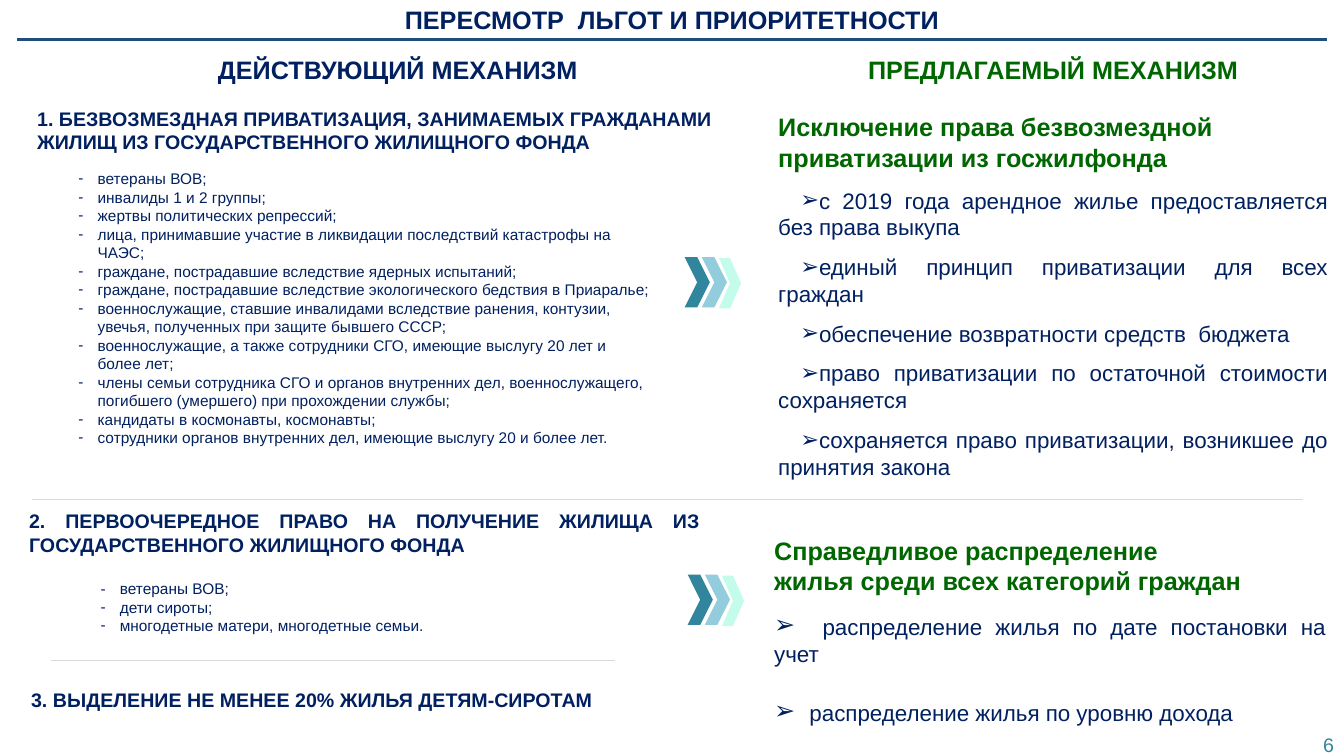
import pptx
import pptx.util
import lxml.etree
from pptx.dml.color import RGBColor
from pptx.enum.shapes import MSO_CONNECTOR, MSO_SHAPE
from pptx.enum.text import MSO_ANCHOR, PP_ALIGN
from pptx.oxml.ns import qn
from pptx.util import Inches

COLORS = {
    "navy": "002060", "green": "006600", "rule": "1E4E79", "divider": "D9D9D9",
    "teal": "31859C", "sky": "93CDDD", "mint": "C4FCEB",
}
LEFT, CENTER, RIGHT, JUSTIFY = PP_ALIGN.LEFT, PP_ALIGN.CENTER, PP_ALIGN.RIGHT, PP_ALIGN.JUSTIFY

# text, place, size, colour, bold, alignment, wrap, anchor, (side, top) inset
LABELS = [
    ("ПЕРЕСМОТР  ЛЬГОТ И ПРИОРИТЕТНОСТИ", (0, -0.05, 13.33, 0.48),
     18, "navy", True, CENTER, True, MSO_ANCHOR.MIDDLE, (0.07, 0.04)),
    ("ДЕЙСТВУЮЩИЙ МЕХАНИЗМ", (2.04, 0.49, 3.81, 0.4),
     18, "navy", True, CENTER, False, MSO_ANCHOR.TOP, (0.1, 0.05)),
    ("ПРЕДЛАГАЕМЫЙ МЕХАНИЗМ", (8.49, 0.49, 3.91, 0.4),
     18, "green", True, CENTER, False, MSO_ANCHOR.TOP, (0.1, 0.05)),
    ("1. БЕЗВОЗМЕЗДНАЯ ПРИВАТИЗАЦИЯ, ЗАНИМАЕМЫХ ГРАЖДАНАМИ ЖИЛИЩ ИЗ "
     "ГОСУДАРСТВЕННОГО ЖИЛИЩНОГО ФОНДА", (0.27, 1.01, 7.35, 0.57),
     14, "navy", True, LEFT, True, MSO_ANCHOR.TOP, (0.1, 0.05)),
    ("2. ПЕРВООЧЕРЕДНОЕ ПРАВО НА ПОЛУЧЕНИЕ ЖИЛИЩА ИЗ ГОСУДАРСТВЕННОГО "
     "ЖИЛИЩНОГО ФОНДА", (0.19, 5, 6.85, 0.57),
     14, "navy", True, JUSTIFY, True, MSO_ANCHOR.TOP, (0.1, 0.05)),
    ("3. ВЫДЕЛЕНИЕ НЕ МЕНЕЕ 20% ЖИЛЬЯ ДЕТЯМ-СИРОТАМ", (0.21, 6.78, 6.59, 0.34),
     14, "navy", True, JUSTIFY, True, MSO_ANCHOR.TOP, (0.1, 0.05)),
    ("6", (12.77, 7.19, 0.59, 0.39),
     14, "teal", False, RIGHT, True, MSO_ANCHOR.MIDDLE, (0.13, 0.07)),
]

BENEFIT_LISTS = [
    ((0.68, 1.63, 5.87, 2.88), [
        "ветераны ВОВ;",
        "инвалиды 1 и 2 группы;",
        "жертвы политических репрессий;",
        "лица, принимавшие участие в ликвидации последствий катастрофы на ЧАЭС;",
        "граждане, пострадавшие вследствие ядерных испытаний;",
        "граждане, пострадавшие вследствие экологического бедствия в Приаралье;",
        "военнослужащие, ставшие инвалидами вследствие ранения, контузии, увечья, "
        "полученных при защите бывшего СССР;",
        "военнослужащие, а также сотрудники СГО, имеющие выслугу 20 лет и более лет;",
        "члены семьи сотрудника СГО и органов внутренних дел, военнослужащего, "
        "погибшего (умершего) при прохождении службы;",
        "кандидаты в космонавты, космонавты;",
        "сотрудники органов внутренних дел, имеющие выслугу 20 и более лет.",
    ]),
    ((0.9, 5.7, 5.87, 0.66), [
        "ветераны ВОВ;",
        "дети сироты;",
        "многодетные матери, многодетные семьи.",
    ]),
]

# place, heading lines, first-line indent, gap between items, (item, tab stop)
PROPOSALS = [
    ((7.62, 1.06, 5.65, 3.55),
     ["Исключение права безвозмездной приватизации из госжилфонда"], 0.22, 9.2, [
        ("с 2019 года арендное жилье предоставляется без права выкупа", None),
        ("единый принцип приватизации для всех граждан", None),
        ("обеспечение возвратности средств  бюджета", None),
        ("право приватизации по остаточной стоимости сохраняется", None),
        ("сохраняется право приватизации, возникшее до принятия закона", None),
    ]),
    ((7.58, 5.26, 5.67, 2.04),
     ["Справедливое распределение", "жилья среди всех категорий граждан"], 0, 20.7, [
        ("распределение жилья по дате постановки на учет", 0.48),
        ("распределение жилья по уровню дохода", 0.35),
    ]),
]
HEADING_GAP = 10.3

# start, end, colour, width
RULES = [
    ((0.17, 0.39), (13.16, 0.39), "rule", 2.25),
    ((0.32, 4.95), (12.92, 4.95), "divider", 0.5),
    ((0.51, 6.55), (6.1, 6.55), "divider", 0.5),
]
ARROW_ORIGINS = [(6.79, 2.55), (6.82, 5.7)]
# offset from the arrow's origin, width, colour
CHEVRONS = [(0, 0, 0.25, "teal"), (0.17, 0, 0.25, "sky"), (0.34, 0.01, 0.22, "mint")]
CHEVRON_HEIGHT = 0.5


def color(name):
    return RGBColor.from_string(COLORS[name])


def add_box(slide, place, wrap=True, anchor=MSO_ANCHOR.TOP, inset=(0.1, 0.05)):
    frame = slide.shapes.add_textbox(*map(Inches, place)).text_frame
    frame.word_wrap = wrap
    frame.vertical_anchor = anchor
    frame.margin_left = frame.margin_right = Inches(inset[0])
    frame.margin_top = frame.margin_bottom = Inches(inset[1])
    return frame


def add_para(frame, align=LEFT, before=0):
    """Return the box's first paragraph while it is empty, otherwise a new one."""
    first = frame.paragraphs[0]
    para = frame.add_paragraph() if first.runs else first
    para.alignment = align
    para.space_before = pptx.util.Pt(before)
    return para


def add_span(para, text, size, color_name, bold=False):
    span = para.add_run()
    span.text = text
    span.font.name = "Arial"
    span.font.size = pptx.util.Pt(size)
    span.font.bold = bold
    span.font.color.rgb = color(color_name)


def set_bullet(para, char, margin, indent, tab=None):
    props = para._p.get_or_add_pPr()
    props.set("marL", str(Inches(margin)))
    props.set("indent", str(Inches(indent)))
    lxml.etree.SubElement(props, qn("a:buFont"), typeface="Arial")
    lxml.etree.SubElement(props, qn("a:buChar"), char=char)
    if tab:
        stops = lxml.etree.SubElement(props, qn("a:tabLst"))
        lxml.etree.SubElement(stops, qn("a:tab"), pos=str(Inches(tab)), algn="l")


def add_benefits(slide, place, items):
    frame = add_box(slide, place)
    for item in items:
        para = add_para(frame)
        set_bullet(para, "-", 0.19, -0.19)
        add_span(para, item, 11, "navy")


def add_proposal(slide, place, heading, indent, gap, items):
    frame = add_box(slide, place)
    for line in heading:
        add_span(add_para(frame), line, 18, "green", True)
    for index, (item, tab) in enumerate(items):
        para = add_para(frame, JUSTIFY, gap if index else HEADING_GAP)
        set_bullet(para, "➢", 0, indent, tab)
        if tab:
            add_span(para, "\t", 18, "navy")
        add_span(para, item, 16, "navy")


def add_rule(slide, start, end, color_name, width):
    rule = slide.shapes.add_connector(MSO_CONNECTOR.STRAIGHT, *map(Inches, start + end))
    rule.line.color.rgb = color(color_name)
    rule.line.width = pptx.util.Pt(width)
    lxml.etree.SubElement(rule._element.spPr, qn("a:effectLst"))


def add_arrow(slide, left, top):
    group = slide.shapes.add_group_shape()
    for across, down, width, color_name in CHEVRONS:
        chevron = group.shapes.add_shape(
            MSO_SHAPE.CHEVRON, Inches(left + across), Inches(top + down),
            Inches(width), Inches(CHEVRON_HEIGHT))
        chevron.shadow.inherit = False
        chevron.fill.solid()
        chevron.fill.fore_color.rgb = color(color_name)
        chevron.line.fill.background()


def main():
    deck = pptx.Presentation()
    deck.slide_width, deck.slide_height = Inches(13.33), Inches(7.5)
    slide = deck.slides.add_slide(deck.slide_layouts[6])
    for text, place, size, color_name, bold, align, wrap, anchor, inset in LABELS:
        frame = add_box(slide, place, wrap, anchor, inset)
        add_span(add_para(frame, align), text, size, color_name, bold)
    for proposal in PROPOSALS:
        add_proposal(slide, *proposal)
    for benefits in BENEFIT_LISTS:
        add_benefits(slide, *benefits)
    for rule in RULES:
        add_rule(slide, *rule)
    for origin in ARROW_ORIGINS:
        add_arrow(slide, *origin)
    deck.save("out.pptx")


if __name__ == "__main__":
    main()
